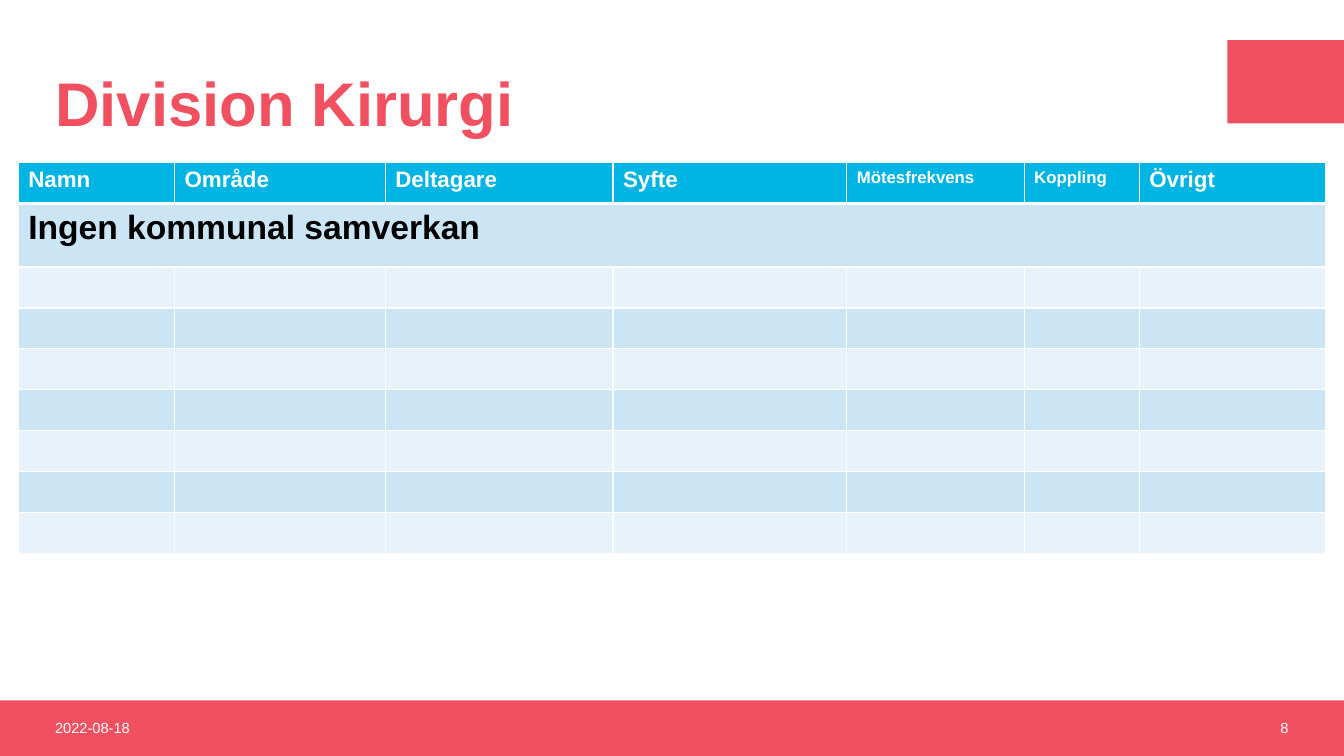
from lxml import etree
from pptx import Presentation
from pptx.dml.color import RGBColor
from pptx.enum.shapes import MSO_SHAPE
from pptx.enum.text import MSO_ANCHOR, PP_ALIGN
from pptx.oxml.ns import qn
from pptx.util import Cm, Pt

RECTANGLE = MSO_SHAPE.RECTANGLE
MIDDLE = MSO_ANCHOR.MIDDLE
LEFT, RIGHT = PP_ALIGN.LEFT, PP_ALIGN.RIGHT
RED, WHITE, BLACK = "F15060", "FFFFFF", "000000"
HEADER_BLUE, BAND_BLUE, PALE_BLUE = "00B4E4", "CCE5F5", "E7F2FA"


def color(value):
    return RGBColor.from_string(value)


def add_span(para, text, size, value, bold=False):
    span = para.add_run()
    span.text = text
    span.font.name = "Arial"
    span.font.size = Pt(size)
    span.font.bold = bold
    span.font.color.rgb = color(value)


deck = Presentation()
deck.slide_width = Cm(33.87)
deck.slide_height = Cm(19.05)
page = deck.slides.add_slide(deck.slide_layouts[5])

for left, top, width, height in [(0, 17.65, 33.87, 1.4), (30.93, 1.01, 2.94, 2.1)]:
    block = page.shapes.add_shape(RECTANGLE, Cm(left), Cm(top), Cm(width), Cm(height))
    block.shadow.inherit = False
    block.fill.solid()
    block.fill.fore_color.rgb = color(RED)
    block.line.fill.background()

title = page.shapes.title
title.left, title.top, title.width, title.height = Cm(1.14), Cm(1.02), Cm(29.49), Cm(3.35)
title.text_frame.vertical_anchor = MIDDLE
title.text_frame.word_wrap = True
para = title.text_frame.paragraphs[0]
para.alignment = LEFT
para.line_spacing = 0.9
add_span(para, "Division Kirurgi", 44, RED, True)

for text, left, alignment in [("2022-08-18", 1.14, LEFT), ("8", 25.1, RIGHT)]:
    box = page.shapes.add_textbox(Cm(left), Cm(17.65), Cm(7.62), Cm(1.37))
    box.text_frame.word_wrap = True
    box.text_frame.vertical_anchor = MIDDLE
    para = box.text_frame.paragraphs[0]
    para.alignment = alignment
    add_span(para, text, 10.5, WHITE)

columns = [
    ("Namn", 3.94, 16),
    ("Område", 5.31, 16),
    ("Deltagare", 5.74, 16),
    ("Syfte", 5.89, 16),
    ("Mötesfrekvens", 4.47, 12),
    ("Koppling", 2.9, 12),
    ("Övrigt", 4.7, 16),
]
row_heights = [1.03, 1.6] + [1.03] * 7
table = page.shapes.add_table(
    len(row_heights), len(columns), Cm(0.46), Cm(4.1), Cm(32.95), Cm(sum(row_heights))
).table

for row, height in zip(table.rows, row_heights):
    row.height = Cm(height)
for index, (heading, width, size) in enumerate(columns):
    table.columns[index].width = Cm(width)
    add_span(table.cell(0, index).text_frame.paragraphs[0], heading, size, WHITE, True)

table.cell(1, 0).merge(table.cell(1, len(columns) - 1))
add_span(table.cell(1, 0).text_frame.paragraphs[0], "Ingen kommunal samverkan", 24, BLACK, True)

for row_index, row in enumerate(table.rows):
    if row_index == 0:
        shade = HEADER_BLUE
    else:
        shade = BAND_BLUE if row_index % 2 else PALE_BLUE
    for cell in row.cells:
        cell.fill.solid()
        cell.fill.fore_color.rgb = color(shade)
        properties = cell._tc.get_or_add_tcPr()
        for position, side in enumerate(["lnL", "lnR", "lnT", "lnB"]):
            thick = (row_index, side) in [(0, "lnB"), (1, "lnT")]
            border = etree.Element(qn(f"a:{side}"), w=str(Pt(3 if thick else 1)))
            fill = etree.SubElement(border, qn("a:solidFill"))
            etree.SubElement(fill, qn("a:srgbClr"), val=WHITE)
            properties.insert(position, border)

deck.save("out.pptx")
